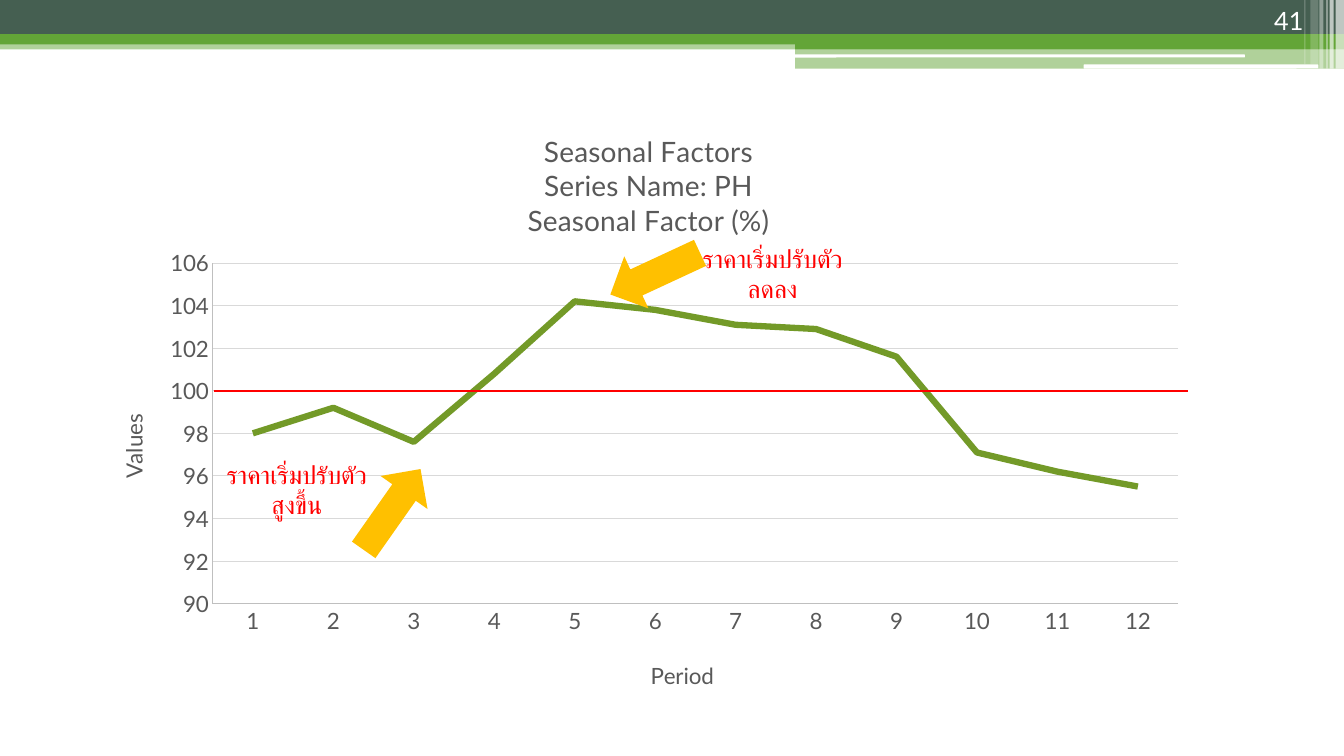
from lxml import etree
from pptx import Presentation
from pptx.chart.data import CategoryChartData
from pptx.dml.color import RGBColor
from pptx.enum.chart import XL_CHART_TYPE, XL_TICK_MARK
from pptx.enum.shapes import MSO_CONNECTOR, MSO_SHAPE
from pptx.enum.text import MSO_ANCHOR, MSO_AUTO_SIZE, PP_ALIGN
from pptx.oxml.ns import qn
from pptx.util import Pt

RECT, ROUND, ARROW = MSO_SHAPE.RECTANGLE, MSO_SHAPE.ROUNDED_RECTANGLE, MSO_SHAPE.RIGHT_ARROW
LINE, NO_TICK, STRAIGHT = XL_CHART_TYPE.LINE, XL_TICK_MARK.NONE, MSO_CONNECTOR.STRAIGHT
CENTER, RIGHT = PP_ALIGN.CENTER, PP_ALIGN.RIGHT
TOP, BOTTOM = MSO_ANCHOR.TOP, MSO_ANCHOR.BOTTOM
GROW, FIXED = MSO_AUTO_SIZE.SHAPE_TO_FIT_TEXT, MSO_AUTO_SIZE.NONE

THEME = {
    "font": "Lato", "title": 20, "axis": 16, "label": 18,
    "dark": "455F51", "green": "63A537", "white": "FFFFFF", "series": "739A28",
    "red": "FF0000", "amber": "FFC000", "grey": "595959",
    "axis_line": "BFBFBF", "grid": "D9D9D9",
}


def rgb(name):
    return RGBColor.from_string(THEME[name])


def set_font(font, size, color):
    values = {"name": THEME["font"], "size": Pt(THEME[size]), "bold": False}
    for key, value in values.items():
        setattr(font, key, value)
    font.color.rgb = rgb(color)


deck = Presentation()
deck.slide_width, deck.slide_height = Pt(960), Pt(540)
page = deck.slides.add_slide(deck.slide_layouts[6])

# Header bands and stripes, then the two arrows: kind, box, colour, opacity, rotation
header = [
    (RECT, (0, 28.8, 960, 6.5), "green", 50, 0),
    (RECT, (0, 0, 960, 24.5), "dark", 100, 0),
    (RECT, (0, 24.5, 960, 7.2), "green", 100, 0),
    (RECT, (568, 28, 392, 7.2), "green", 100, 0),
    (RECT, (568, 34.6, 392, 14.4), "green", 50, 0),
    (ROUND, (567.4, 38.9, 321.8, 2.2), "white", 100, 0),
    (ROUND, (774, 46.1, 167.8, 2.9), "white", 100, 0),
]
stripes = [
    (954, 6, 49, 65), (949.7, 2.9, 49, 65), (947.5, 0.8, 49, 60),
    (942.5, 2.9, 49, 40), (936, 5.8, 46, 20), (931.7, 0.8, 46, 30),
]
header += [(RECT, (left, 0, width, height), "white", opacity, 0)
           for left, width, height, opacity in stripes]
arrows = [
    (ARROW, (244.8, 343.4, 70.6, 41), "amber", 100, 305.1),
    (ARROW, (432.7, 175, 70.6, 41), "amber", 100, 155.1),
]

# Seasonal factor chart
data = CategoryChartData(number_format="0")
data.categories = [str(period) for period in range(1, 13)]
data.add_series("Series 1", (98.0, 99.2, 97.6, 100.8, 104.2, 103.8,
                             103.1, 102.9, 101.6, 97.1, 96.2, 95.5))
chart = page.shapes.add_chart(LINE, Pt(65.5), Pt(75), Pt(792.7), Pt(427.7), data).chart
set_font(chart.font, "axis", "grey")
chart.has_legend = False
chart.has_title = True
series = chart.plots[0].series[0]
series.smooth = False
series.format.line.width = Pt(4.5)
series.format.line.color.rgb = rgb("series")
chart.plots[0].vary_by_categories = False

periods, factors = chart.category_axis, chart.value_axis
for axis in (periods, factors):
    axis.has_title = True
    axis.major_tick_mark = axis.minor_tick_mark = NO_TICK
    set_font(axis.tick_labels.font, "axis", "grey")
    axis.format.line.color.rgb = rgb("axis_line")
    axis.format.line.width = Pt(0.75)
scale = {"minimum_scale": 90, "maximum_scale": 106, "major_unit": 2,
         "has_major_gridlines": True}
for key, value in scale.items():
    setattr(factors, key, value)
factors.major_gridlines.format.line.color.rgb = rgb("grid")
factors.major_gridlines.format.line.width = Pt(0.75)

# Titles, placed as fractions of the chart
titles = [
    (chart.chart_title, "Seasonal Factors\nSeries Name: PH\nSeasonal Factor (%)", "title", 0.39, 0.04),
    (periods.axis_title, "Period", "axis", 0.5, 0.92),
    (factors.axis_title, "Values", "axis", 0.02, 0.51),
]
placed = [(chart.plots[0]._element.getparent(), {
    "layoutTarget": "inner", "xMode": "edge", "yMode": "edge",
    "x": 0.109, "y": 0.264, "w": 0.87, "h": 0.569})]
for title, text, size, x, y in titles:
    title.text_frame.text = text
    for para in title.text_frame.paragraphs:
        para.alignment = CENTER
        set_font(para.font, size, "grey")
        for span in para.runs:
            set_font(span.font, size, "grey")
    placed.append((title._element, {"xMode": "edge", "yMode": "edge", "x": x, "y": y}))
turned = factors.axis_title.text_frame._txBody.find(qn("a:bodyPr"))
turned.set("rot", "-5400000")
turned.set("vert", "horz")

for part, values in placed:
    for old in part.findall(qn("c:layout")):
        part.remove(old)
    layout = etree.Element(qn("c:layout"))
    manual = etree.SubElement(layout, qn("c:manualLayout"))
    for key, value in values.items():
        etree.SubElement(manual, qn("c:" + key)).set("val", str(value))
    part.insert(0 if part.find(qn("c:tx")) is None else 1, layout)

# Line at 100 percent
base = page.shapes.add_connector(STRAIGHT, Pt(152.6), Pt(279.4), Pt(848.9), Pt(279.4))
base.line.color.rgb = rgb("red")
base.line.width = Pt(1.5)
etree.SubElement(base._element.spPr, qn("a:effectLst"))

# Draw the header and the arrows
for kind, box, color, opacity, rotation in header + arrows:
    shape = page.shapes.add_shape(kind, *map(Pt, box))
    shape.shadow.inherit = False
    shape.rotation = rotation
    shape.fill.solid()
    shape.fill.fore_color.rgb = rgb(color)
    shape.line.fill.background()
    if opacity < 100:
        tint = shape._element.spPr.find(qn("a:solidFill"))[0]
        etree.SubElement(tint, qn("a:alpha")).set("val", str(opacity * 1000))

# Page number and price notes
labels = [
    ("41", (858.2, 0, 80, 28.8), "white", RIGHT, BOTTOM, FIXED),
    ("ราคาเริ่มปรับตัวสูงขึ้น", (152.6, 324.7, 118.8, 51), "red", CENTER, TOP, GROW),
    ("ราคาเริ่มปรับตัวลดลง", (492.5, 170, 118.8, 51), "red", CENTER, TOP, GROW),
]
for text, box, color, alignment, anchor, fit in labels:
    frame = page.shapes.add_textbox(*map(Pt, box)).text_frame
    values = {"word_wrap": True, "vertical_anchor": anchor, "auto_size": fit, "text": text}
    for key, value in values.items():
        setattr(frame, key, value)
    para = frame.paragraphs[0]
    para.alignment = alignment
    set_font(para.runs[0].font, "label", color)

deck.save("out.pptx")
